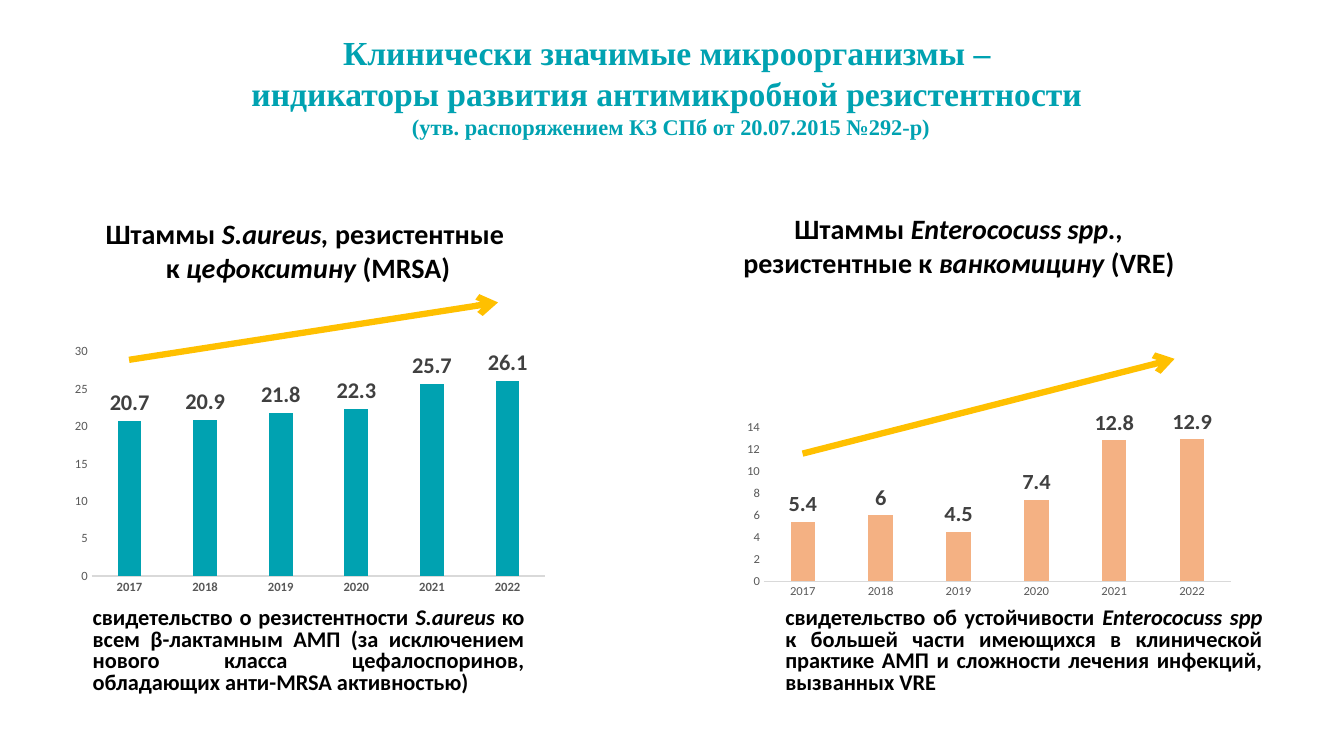
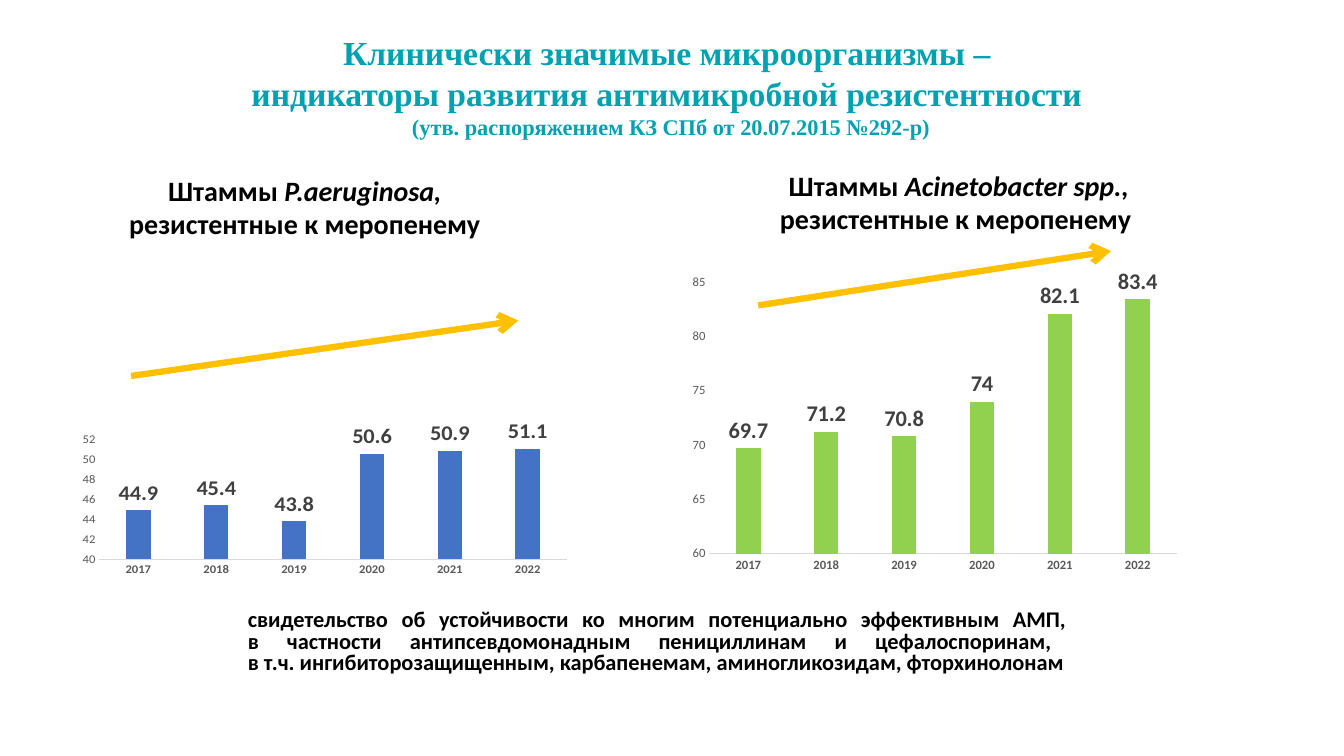
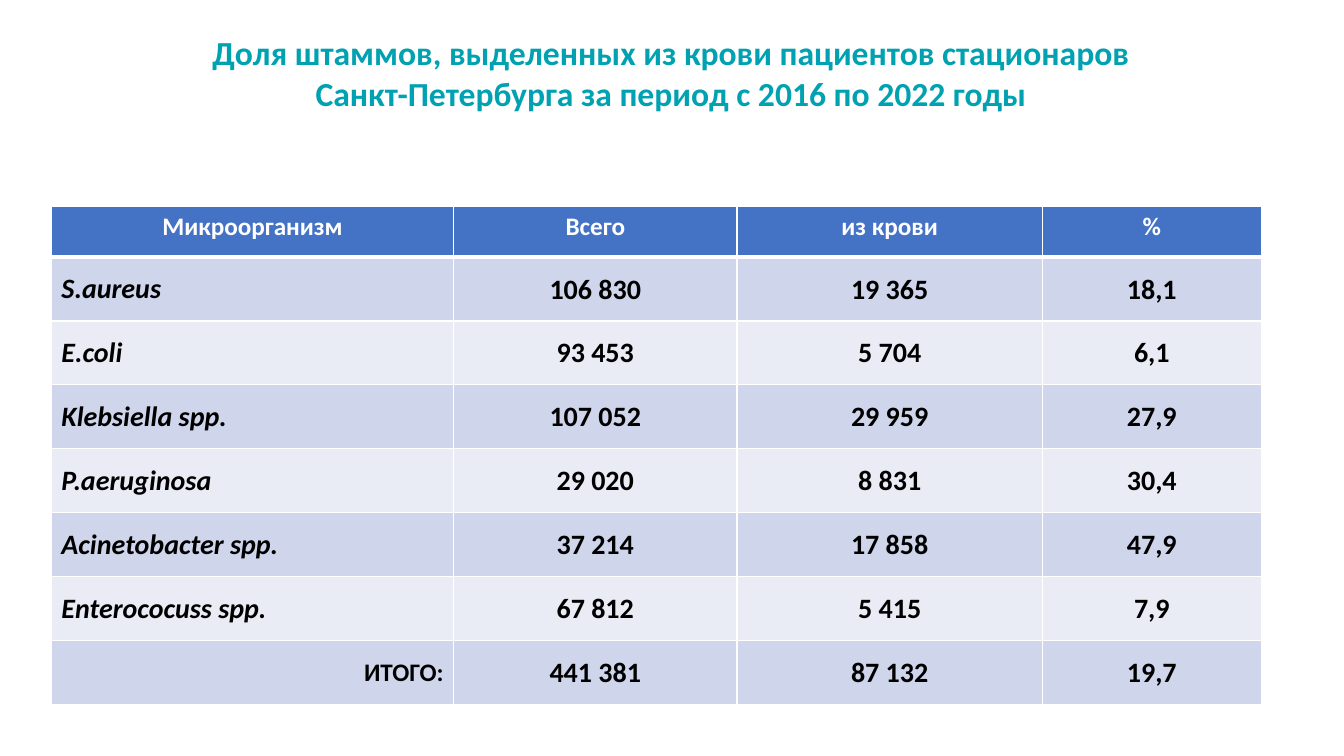
from copy import deepcopy
from dataclasses import dataclass

from lxml import etree
from pptx import Presentation
from pptx.chart.data import CategoryChartData
from pptx.dml.color import RGBColor
from pptx.enum.chart import XL_CHART_TYPE, XL_LABEL_POSITION, XL_TICK_MARK
from pptx.enum.shapes import MSO_CONNECTOR
from pptx.enum.text import MSO_ANCHOR, MSO_AUTO_SIZE, PP_ALIGN
from pptx.oxml.ns import qn
from pptx.util import Pt

PX = 9144
TEAL = RGBColor(0x00, 0xA2, 0xB1)
PEACH = RGBColor(0xF4, 0xB1, 0x83)
BLUE = RGBColor(0x44, 0x72, 0xC4)
GREEN = RGBColor(0x92, 0xD0, 0x50)
GOLD = RGBColor(0xFF, 0xC0, 0x00)
BLACK = RGBColor(0x00, 0x00, 0x00)
WHITE = RGBColor(0xFF, 0xFF, 0xFF)
DARK_GREY = RGBColor(0x40, 0x40, 0x40)
MID_GREY = RGBColor(0x59, 0x59, 0x59)
LIGHT_GREY = RGBColor(0xD9, 0xD9, 0xD9)
BANDS = (RGBColor(0xCF, 0xD5, 0xEA), RGBColor(0xE9, 0xEB, 0xF5))

SANS = "Calibri"
SERIF = "Times New Roman"
LEFT, CENTER, RIGHT, JUSTIFY = PP_ALIGN.LEFT, PP_ALIGN.CENTER, PP_ALIGN.RIGHT, PP_ALIGN.JUSTIFY
TOP, MIDDLE = MSO_ANCHOR.TOP, MSO_ANCHOR.MIDDLE
NO_FIT = MSO_AUTO_SIZE.NONE
COLUMNS = XL_CHART_TYPE.COLUMN_CLUSTERED
OUTSIDE = XL_LABEL_POSITION.OUTSIDE_END
NO_TICK = XL_TICK_MARK.NONE
STRAIGHT = MSO_CONNECTOR.STRAIGHT

YEARS = [str(year) for year in range(2017, 2023)]
TITLE_BOX = (165, 27, 1001)
INDICATOR_TITLE = ("Клинически значимые микроорганизмы – \v"
                   "индикаторы развития антимикробной резистентности ")
INDICATOR_SUBTITLE = "(утв. распоряжением КЗ СПб от 20.07.2015 №292-р)"


@dataclass
class Panel:
    """One organism: heading box, then chart box and arrow ends from its corner."""

    box: tuple
    heading: str
    chart_box: tuple
    arrow: tuple
    values: tuple
    scale: tuple
    color: RGBColor
    bold_years: bool = True
    plot_box: tuple = ()


MRSA = Panel(
    box=(72, 210, 467, 77),
    heading="Штаммы _S.aureus, _резистентные \nк _цефокситину_ (MRSA)",
    chart_box=(-16, 131, 500, 265), arrow=(56, 147, 422, 90),
    values=(20.7, 20.9, 21.8, 22.3, 25.7, 26.1), scale=(0, 30, 5),
    color=TEAL, plot_box=(0.07, 0.03, 0.9, 0.84))
VRE = Panel(
    box=(714, 205, 474, 77),
    heading="Штаммы _Enterococuss spp., _резистентные к _ванкомицину_ (VRE)",
    chart_box=(17, 201, 500, 192), arrow=(82, 245, 451, 151),
    values=(5.4, 6, 4.5, 7.4, 12.8, 12.9), scale=(0, 14, 2),
    color=PEACH, bold_years=False)
PSEUDOMONAS = Panel(
    box=(72, 167, 467, 77),
    heading="Штаммы _P.aeruginosa, _\nрезистентные к меропенему ",
    chart_box=(0, 249, 500, 159), arrow=(58, 206, 442, 151),
    values=(44.9, 45.4, 43.8, 50.6, 50.9, 51.1), scale=(40, 52, 2), color=BLUE)
ACINETOBACTER = Panel(
    box=(714, 162, 474, 77),
    heading="Штаммы _Acinetobacter spp., _резистентные к меропенему ",
    chart_box=(-37, 104, 500, 308), arrow=(38, 141, 388, 87),
    values=(69.7, 71.2, 70.8, 74, 82.1, 83.4), scale=(60, 85, 5), color=GREEN)

INDICATOR_PAGES = (
    ((MRSA, VRE), (
        ((82, 599, 448, 96),
         "свидетельство о резистентности _S.aureus _ко всем β-лактамным АМП "
         "(за исключением нового класса цефалоспоринов, обладающих "
         "анти-MRSA активностью)"),
        ((769, 599, 493, 96),
         "свидетельство об устойчивости _Enterococuss spp _к большей части "
         "имеющихся в клинической практике АМП и сложности лечения инфекций, "
         "вызванных VRE"))),
    ((PSEUDOMONAS, ACINETOBACTER), (
        ((236, 601, 845, 75),
         "свидетельство об устойчивости ко многим потенциально эффективным АМП, \v"
         "в частности антипсевдомонадным пенициллинам и цефалоспоринам, \v"
         "в т.ч. ингибиторозащищенным, карбапенемам, аминогликозидам, "
         "фторхинолонам"),)),
)

BLOOD_TITLE = ("Доля штаммов, выделенных из крови пациентов стационаров "
               "Санкт-Петербурга за период с 2016 по 2022 годы")
BLOOD_WIDTHS = (399, 281, 303, 217)
BLOOD_HEIGHT, HEADER_HEIGHT = 494, 50
BLOOD_ROWS = (
    ("Микроорганизм", "Всего", "из крови", "%"),
    ("S.aureus", "106 830", "19 365", "18,1"),
    ("E.coli", "93 453", "5 704", "6,1"),
    ("Klebsiella spp.", "107 052", "29 959", "27,9"),
    ("P.aeruginosa", "29 020", "8 831", "30,4"),
    ("Acinetobacter spp.", "37 214", "17 858", "47,9"),
    ("Enterococuss spp.", "67 812", "5 415", "7,9"),
    ("ИТОГО:", "441 381", "87 132", "19,7"),
)


def px(*lengths):
    """Turn px lengths into EMU."""
    return [length * PX for length in lengths]


def set_font(font, size, color, bold=False, italic=False, name=SANS):
    """Apply one character format."""
    font.name, font.size, font.bold, font.italic = name, Pt(size), bold, italic
    font.color.rgb = color


def write(frame, text, size=20, color=BLACK, font=SANS, align=CENTER,
          spacing=None, italic=False):
    """Add bold paragraphs; underscores toggle italics and \\v breaks a line."""
    for line in text.split("\n"):
        para = frame.paragraphs[-1]
        if para.runs:
            para = frame.add_paragraph()
        para.alignment = align
        if spacing:
            para.line_spacing = spacing
        for index, part in enumerate(line.split("_")):
            for row, words in enumerate(part.split("\v")):
                if row:
                    para.add_line_break()
                if words:
                    span = para.add_run()
                    span.text = words
                    set_font(span.font, size, color, True, italic != bool(index % 2), font)
        for line_break in para._p.findall(qn("a:br")):
            line_break.append(deepcopy(para._p.find(qn("a:r")).find(qn("a:rPr"))))


def add_text(page, box, text, **style):
    """Add a wrapped text box."""
    frame = page.shapes.add_textbox(*px(*box)).text_frame
    frame.word_wrap = True
    write(frame, text, **style)


def add_page(deck, height, title, font):
    """Add a page with its centred teal title and return both."""
    page = deck.slides.add_slide(deck.slide_layouts.get_by_name("Title Only"))
    holder = page.shapes.title
    holder.left, holder.top, holder.width, holder.height = px(*TITLE_BOX, height)
    frame = holder.text_frame
    frame.auto_size, frame.vertical_anchor, frame.word_wrap = NO_FIT, TOP, True
    write(frame, title, size=24, color=TEAL, font=font)
    return page, frame


def add_trend(page, begin_x, begin_y, end_x, end_y):
    """Draw a gold arrow from its tail to its head."""
    trend = page.shapes.add_connector(STRAIGHT, *px(begin_x, begin_y, end_x, end_y))
    trend.line.color.rgb = GOLD
    trend.line.width = Pt(4.5)
    properties = trend._element.spPr
    etree.SubElement(properties.find(qn("a:ln")), qn("a:tailEnd"), type="arrow")
    etree.SubElement(properties, qn("a:effectLst"))


def place_plot(chart, plot_box):
    """Fix the inner plot area as fractions of the chart."""
    area = chart._chartSpace.find(".//" + qn("c:plotArea"))
    for old in area.findall(qn("c:layout")):
        area.remove(old)
    layout = etree.Element(qn("c:layout"))
    manual = etree.SubElement(layout, qn("c:manualLayout"))
    settings = [("layoutTarget", "inner"), ("xMode", "edge"), ("yMode", "edge")]
    settings += zip("xywh", map(str, plot_box))
    for tag, value in settings:
        etree.SubElement(manual, qn("c:" + tag), val=value)
    area.insert(0, layout)


def add_columns(page, box, panel):
    """Add the column chart of yearly shares."""
    data = CategoryChartData()
    data.categories = YEARS
    data.add_series("Series 1", panel.values)
    chart = page.shapes.add_chart(COLUMNS, *px(*box), data).chart
    chart.has_legend = chart.has_title = False
    set_font(chart.font, 10, BLACK)

    years, shares = chart.category_axis, chart.value_axis
    for axis, bold in ((years, panel.bold_years), (shares, False)):
        axis.has_major_gridlines = False
        axis.major_tick_mark = axis.minor_tick_mark = NO_TICK
        set_font(axis.tick_labels.font, 9, MID_GREY, bold)
    years.format.line.color.rgb = LIGHT_GREY
    years.format.line.width = Pt(0.75)
    shares.format.line.fill.background()
    shares.minimum_scale, shares.maximum_scale, shares.major_unit = panel.scale

    plot = chart.plots[0]
    plot.gap_width, plot.overlap, plot.vary_by_categories = 219, -27, False
    fill = plot.series[0].format.fill
    fill.solid()
    fill.fore_color.rgb = panel.color
    plot.has_data_labels = True
    labels = plot.data_labels
    labels.show_value, labels.position = True, OUTSIDE
    set_font(labels.font, 16, DARK_GREY, True)
    if panel.plot_box:
        place_plot(chart, panel.plot_box)


def add_panel(page, panel):
    """Place heading, arrow and chart from the panel's corner."""
    left, top = panel.box[:2]
    add_text(page, panel.box, panel.heading)
    begin_x, begin_y, end_x, end_y = panel.arrow
    add_trend(page, left + begin_x, top + begin_y, left + end_x, top + end_y)
    across, down, width, height = panel.chart_box
    add_columns(page, (left + across, top + down, width, height), panel)


def add_indicator_page(deck, panels, notes):
    """Build a page with two organism panels and justified notes."""
    page, title = add_page(deck, 118, INDICATOR_TITLE, SERIF)
    write(title, INDICATOR_SUBTITLE, size=16, color=TEAL, font=SERIF)
    for panel in panels:
        add_panel(page, panel)
    for box, text in notes:
        add_text(page, box, text, size=16, align=JUSTIFY, spacing=0.8)


def paint_cell(cell, color, top, bottom):
    """Give a cell white borders, widths in points, and a fill."""
    properties = cell._tc.get_or_add_tcPr()
    for side, width in (("L", 1), ("R", 1), ("T", top), ("B", bottom)):
        line = etree.SubElement(properties, qn("a:ln" + side), w=str(Pt(width)))
        paint = etree.SubElement(line, qn("a:solidFill"))
        etree.SubElement(paint, qn("a:srgbClr"), val=str(WHITE))
    cell.fill.solid()
    cell.fill.fore_color.rgb = color


def fill_row(table, row, texts):
    """Fill one row: header, organism or total."""
    header, total = row == 0, row == len(BLOOD_ROWS) - 1
    color = BLUE if header else BANDS[(row - 1) % 2]
    for column, text in enumerate(texts):
        cell = table.cell(row, column)
        paint_cell(cell, color, 3 if row == 1 else 1, 3 if header else 1)
        cell.vertical_anchor = TOP if header else MIDDLE
        name = column == 0 and not header
        if column and not header:
            cell.margin_left, cell.margin_right, cell.margin_top, cell.margin_bottom = px(1, 1, 1, 0)
        align = CENTER if not name else RIGHT if total else LEFT
        write(cell.text_frame, text, size=18 if header or name and total else 20,
              color=WHITE if header else BLACK, align=align,
              italic=name and not total)


def add_blood_table(page, left, top):
    """Add the table of strains isolated from blood."""
    size = px(left, top, sum(BLOOD_WIDTHS), BLOOD_HEIGHT)
    table = page.shapes.add_table(len(BLOOD_ROWS), len(BLOOD_WIDTHS), *size).table
    for column, width in zip(table.columns, px(*BLOOD_WIDTHS)):
        column.width = width
    header_height, body_height = px(HEADER_HEIGHT, BLOOD_HEIGHT - HEADER_HEIGHT)
    for row, texts in enumerate(BLOOD_ROWS):
        table.rows[row].height = body_height // (len(BLOOD_ROWS) - 1) if row else header_height
        fill_row(table, row, texts)


def main():
    """Build and save the deck."""
    deck = Presentation()
    deck.slide_width, deck.slide_height = px(1333, 750)
    for panels, notes in INDICATOR_PAGES:
        add_indicator_page(deck, panels, notes)
    page, _ = add_page(deck, 91, BLOOD_TITLE, SANS)
    add_blood_table(page, 51, 205)
    deck.save("out.pptx")


if __name__ == "__main__":
    main()
